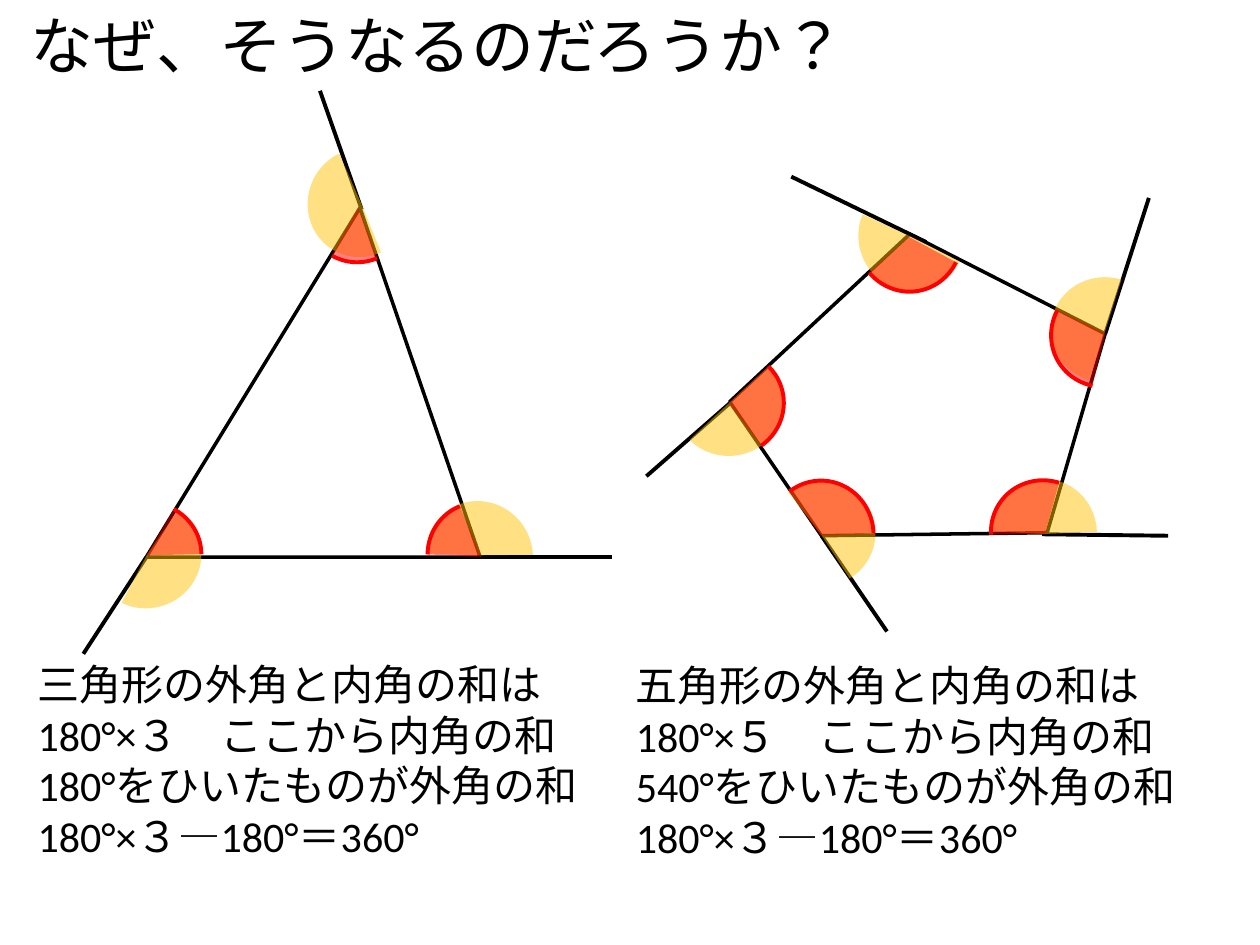
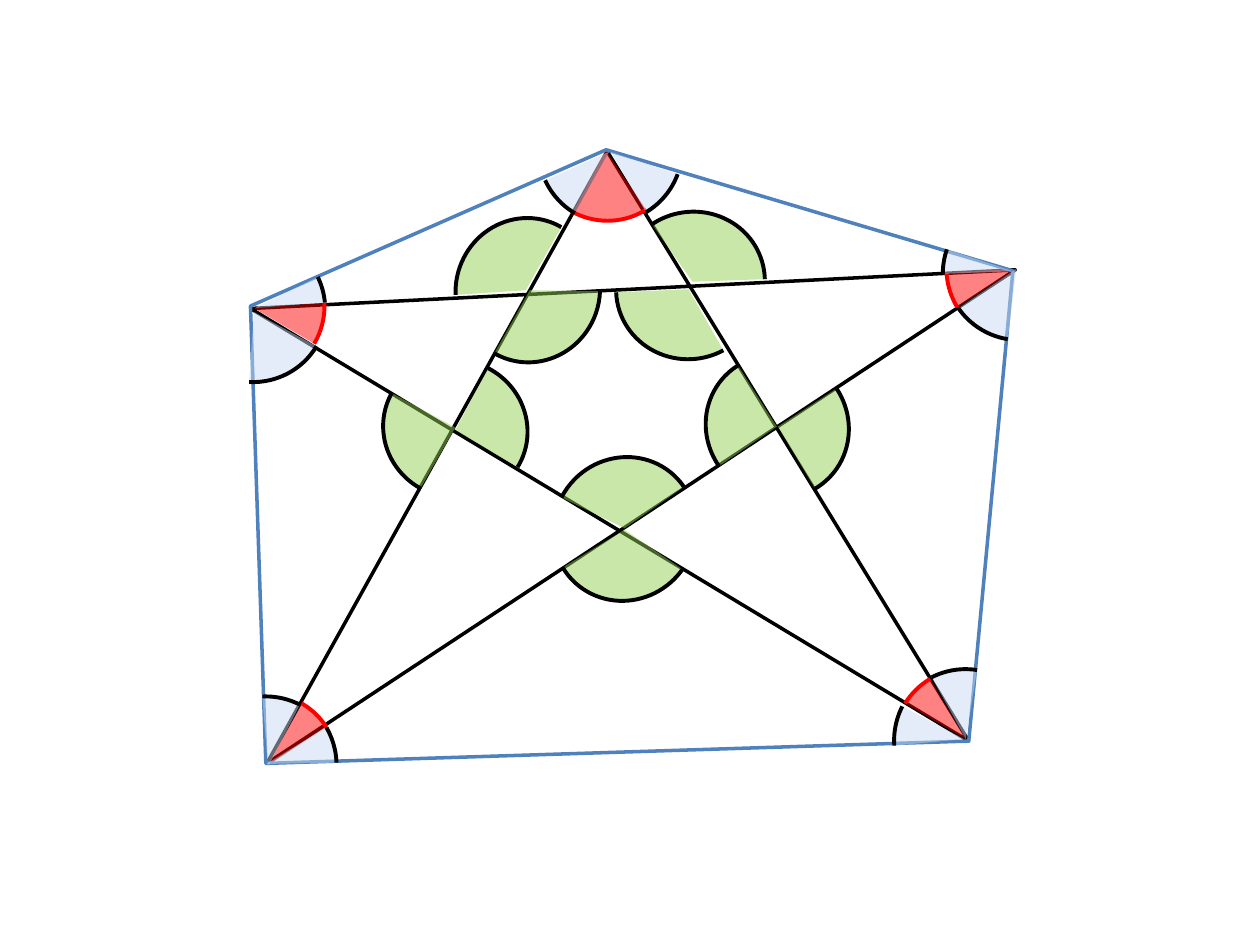
from typing import NamedTuple

from lxml import etree
from pptx import Presentation
from pptx.dml.color import RGBColor
from pptx.enum.lang import MSO_LANGUAGE_ID
from pptx.enum.shapes import MSO_CONNECTOR, MSO_SHAPE
from pptx.enum.text import MSO_ANCHOR, MSO_AUTO_SIZE, PP_ALIGN
from pptx.oxml.ns import qn
from pptx.shapes.autoshape import Shape
from pptx.slide import Slide
from pptx.util import Cm, Pt

ARC = MSO_SHAPE.ARC
TRIANGLE = MSO_SHAPE.ISOSCELES_TRIANGLE
STRAIGHT = MSO_CONNECTOR.STRAIGHT
LEFT = PP_ALIGN.LEFT
TOP = MSO_ANCHOR.TOP
MIDDLE = MSO_ANCHOR.MIDDLE
NO_AUTOSIZE = MSO_AUTO_SIZE.NONE
GROW = MSO_AUTO_SIZE.SHAPE_TO_FIT_TEXT
JAPANESE = MSO_LANGUAGE_ID.JAPANESE

BLACK = RGBColor(0x00, 0x00, 0x00)
RED = RGBColor(0xFF, 0x00, 0x00)
AMBER = RGBColor(0xFF, 0xC0, 0x00)
GREEN = RGBColor(0x92, 0xD0, 0x50)
PALE_BLUE = RGBColor(0xC6, 0xD9, 0xF1)
BLUE = RGBColor(0x4F, 0x81, 0xBD)

FONT = "Calibri"
OUTLINE_WIDTH = Pt(2)
STROKE_WIDTH = Pt(2.25)
WEDGE_OPACITY = 49000

Point = tuple[float, float]


class Wedge(NamedTuple):
    left: float
    top: float
    rotation: float
    start_adjustment: float
    end_adjustment: float


class WedgeStyle(NamedTuple):
    width: float
    height: float
    fill: RGBColor
    line: RGBColor | None


class Segment(NamedTuple):
    start: Point
    end: Point


class TextBlock(NamedTuple):
    left: float
    top: float
    width: float
    height: float
    size: int
    lines: list[str]


EXTERIOR = WedgeStyle(2.21, 2.13, AMBER, None)
INTERIOR = WedgeStyle(2.21, 2.13, RED, RED)
STAR_TIP = WedgeStyle(2.82, 2.92, RED, RED)
STAR_SIDE = WedgeStyle(2.82, 2.92, PALE_BLUE, BLACK)
STAR_CROSSING = WedgeStyle(2.82, 2.92, GREEN, BLACK)

TITLE = TextBlock(0.36, 0, 23.8, 1.8, 36, ["なぜ、そうなるのだろうか？"])


def caption(left: float, top: float, polygon: str, count: str, interior_sum: str) -> TextBlock:
    return TextBlock(left, top, 11.63, 4.37, 24, [
        f"{polygon}の外角と内角の和は",
        f"180°×{count}　ここから内角の和",
        f"{interior_sum}をひいたものが外角の和",
        "180°×３―180°＝360°",
    ])


CAPTIONS = [
    caption(0.51, 13.16, "三角形", "３", "180°"),
    caption(12.57, 13.18, "五角形", "５", "540°"),
]

PENTAGON = [(18.34, 4.72), (14.71, 8.1), (16.56, 10.8), (21.11, 10.74), (22.28, 6.73)]

EXTENSIONS = [
    Segment((23.16, 3.99), (22.28, 6.73)),
    Segment((21.01, 10.77), (23.55, 10.8)),
    Segment((16.56, 10.8), (17.88, 12.73)),
    Segment((13.03, 9.6), (14.71, 8.13)),
    Segment((15.95, 3.56), (18.67, 4.88)),
    Segment((6.45, 1.83), (7.29, 4.22)),
    Segment((9.68, 11.23), (12.34, 11.23)),
    Segment((1.68, 13.18), (2.95, 11.23)),
]

EXTERIOR_ANGLES = [
    Wedge(6.17, 3.02, 294.7, 79.93, 186.89),
    Wedge(1.85, 10.13, 166.4, 83.18, 186.89),
    Wedge(8.56, 10.13, 56, 75.62, 182.06),
    Wedge(15.44, 9.7, 166.4, 39.57, 150.31),
    Wedge(19.94, 9.7, 95.6, 52.4, 157.34),
    Wedge(21.18, 5.59, 8.1, 59.93, 167.71),
    Wedge(17.27, 3.71, 249.6, 82.43, 189.07),
    Wedge(13.59, 7.06, 176.8, 84.24, 192.12),
]

INTERIOR_ANGLES = [
    Wedge(6.12, 3.12, 290.1, 83.71, 113.17),
    Wedge(8.59, 10.16, 58.8, 74.21, 113.17),
    Wedge(1.85, 10.13, 170.1, 78.2, 113.17),
    Wedge(13.59, 7.06, 177.5, 83.71, 141.25),
    Wedge(15.44, 9.73, 94.9, 83.71, 157.74),
    Wedge(19.96, 9.7, 39.8, 83.71, 147.39),
    Wedge(21.18, 5.66, 330.4, 80.14, 141.25),
    Wedge(17.22, 3.71, 262.4, 75.55, 141.25),
]

STAR = [(12.24, 3.05), (5.38, 15.39), (20.47, 5.44), (5.05, 6.22), (19.53, 14.94)]
STAR_FRAME = [(12.22, 3.02), (20.42, 5.46), (19.53, 14.94), (5.36, 15.39), (5.05, 6.17)]

TIP_ANGLES = [
    Wedge(3.71, 4.75, 208.8, 88.08, 109.04),
    Wedge(3.99, 13.97, 151.4, 88.29, 105.17),
    Wedge(18.06, 13.44, 57.6, 91.71, 109.04),
    Wedge(19.08, 3.96, 354.9, 91.15, 109.04),
    Wedge(10.8, 1.57, 296, 71.75, 109.04),
]

SIDE_ANGLES = [
    Wedge(3.96, 13.94, 167.8, 96.43, 114.65),
    Wedge(3.99, 14, 118.6, 88.08, 107.16),
    Wedge(3.73, 4.75, 164.4, 101.52, 114.65),
    Wedge(3.71, 4.83, 256.6, 79.24, 118.4),
    Wedge(18.06, 13.44, 94.2, 88.08, 111),
    Wedge(18.03, 13.44, 16.7, 94.78, 114.65),
    Wedge(19.08, 3.96, 314.7, 85.35, 114.65),
    Wedge(19.02, 4.01, 31.2, 88.08, 100.21),
    Wedge(10.9, 1.6, 231.6, 88.08, 112.79),
    Wedge(10.87, 1.6, 324.9, 92.51, 114.65),
]

CROSSING_ANGLES = [
    Wedge(11.18, 9.19, 45.3, 96.43, 167.88),
    Wedge(11.18, 9.22, 228.9, 99.23, 167.88),
    Wedge(7.77, 7.21, 111, 112.16, 167.88),
    Wedge(7.77, 7.16, 288.8, 114.57, 167.88),
    Wedge(9.19, 4.39, 19.6, 93.95, 167.88),
    Wedge(9.27, 4.39, 199.6, 96.71, 167.88),
    Wedge(12.55, 4.22, 78.2, 93.95, 167.88),
    Wedge(12.47, 4.37, 263.7, 93.95, 164.33),
    Wedge(14.27, 7.14, 139.2, 112.68, 167.88),
    Wedge(14.25, 7.14, 317.8, 112.68, 167.88),
]


def style_outline(shape: Shape, color: RGBColor) -> None:
    shape.shadow.inherit = False
    shape.fill.background()
    shape.line.color.rgb = color
    shape.line.width = OUTLINE_WIDTH


def add_polygon(slide: Slide, points: list[Point], color: RGBColor) -> None:
    corners = [(Cm(x), Cm(y)) for x, y in points]
    builder = slide.shapes.build_freeform(*corners[0])
    builder.add_line_segments(corners[1:], close=True)
    style_outline(builder.convert_to_shape(), color)


def add_triangle(slide: Slide) -> None:
    shape = slide.shapes.add_shape(TRIANGLE, Cm(2.95), Cm(4.19), Cm(6.73), Cm(7.04))
    shape.adjustments[0] = 0.64
    style_outline(shape, BLACK)


def add_segment(slide: Slide, segment: Segment) -> None:
    ends = [Cm(value) for value in segment.start + segment.end]
    connector = slide.shapes.add_connector(STRAIGHT, *ends)
    connector.line.color.rgb = BLACK
    connector.line.width = STROKE_WIDTH
    etree.SubElement(connector._element.spPr, qn("a:effectLst"))


def add_wedges(slide: Slide, wedges: list[Wedge], style: WedgeStyle) -> None:
    for wedge in wedges:
        shape = slide.shapes.add_shape(
            ARC, Cm(wedge.left), Cm(wedge.top), Cm(style.width), Cm(style.height)
        )
        shape.rotation = wedge.rotation
        shape.adjustments[0] = wedge.start_adjustment
        shape.adjustments[1] = wedge.end_adjustment
        shape.shadow.inherit = False
        shape.fill.solid()
        shape.fill.fore_color.rgb = style.fill
        fill_color = shape._element.spPr.find(qn("a:solidFill"))[0]
        etree.SubElement(fill_color, qn("a:alpha"), val=str(WEDGE_OPACITY))
        if style.line is None:
            shape.line.fill.background()
        else:
            shape.line.color.rgb = style.line
            shape.line.width = STROKE_WIDTH


def add_text(slide: Slide, block: TextBlock, anchor: MSO_ANCHOR, wrap: bool) -> None:
    box = slide.shapes.add_textbox(
        Cm(block.left), Cm(block.top), Cm(block.width), Cm(block.height)
    )
    text_frame = box.text_frame
    text_frame.text = "\n".join(block.lines)
    text_frame.word_wrap = wrap
    text_frame.auto_size = NO_AUTOSIZE if wrap else GROW
    text_frame.vertical_anchor = anchor
    for paragraph in text_frame.paragraphs:
        paragraph.alignment = LEFT
        for run in paragraph.runs:
            run.font.name = FONT
            run.font.size = Pt(block.size)
            run.font.color.rgb = BLACK
            run.font.language_id = JAPANESE


def build_exterior_angles(slide: Slide) -> None:
    add_text(slide, TITLE, MIDDLE, True)
    add_triangle(slide)
    add_polygon(slide, PENTAGON, BLACK)
    for extension in EXTENSIONS:
        add_segment(slide, extension)
    add_wedges(slide, EXTERIOR_ANGLES, EXTERIOR)
    for block in CAPTIONS:
        add_text(slide, block, TOP, False)
    add_wedges(slide, INTERIOR_ANGLES, INTERIOR)


def build_star(slide: Slide) -> None:
    add_polygon(slide, STAR, BLACK)
    add_wedges(slide, TIP_ANGLES, STAR_TIP)
    add_polygon(slide, STAR_FRAME, BLUE)
    add_wedges(slide, SIDE_ANGLES, STAR_SIDE)
    add_wedges(slide, CROSSING_ANGLES, STAR_CROSSING)


def main() -> None:
    presentation = Presentation()
    presentation.slide_width = Cm(25.4)
    presentation.slide_height = Cm(19.05)
    blank_layout = presentation.slide_layouts[6]
    for build in (build_exterior_angles, build_star):
        build(presentation.slides.add_slide(blank_layout))
    presentation.save("out.pptx")


if __name__ == "__main__":
    main()
